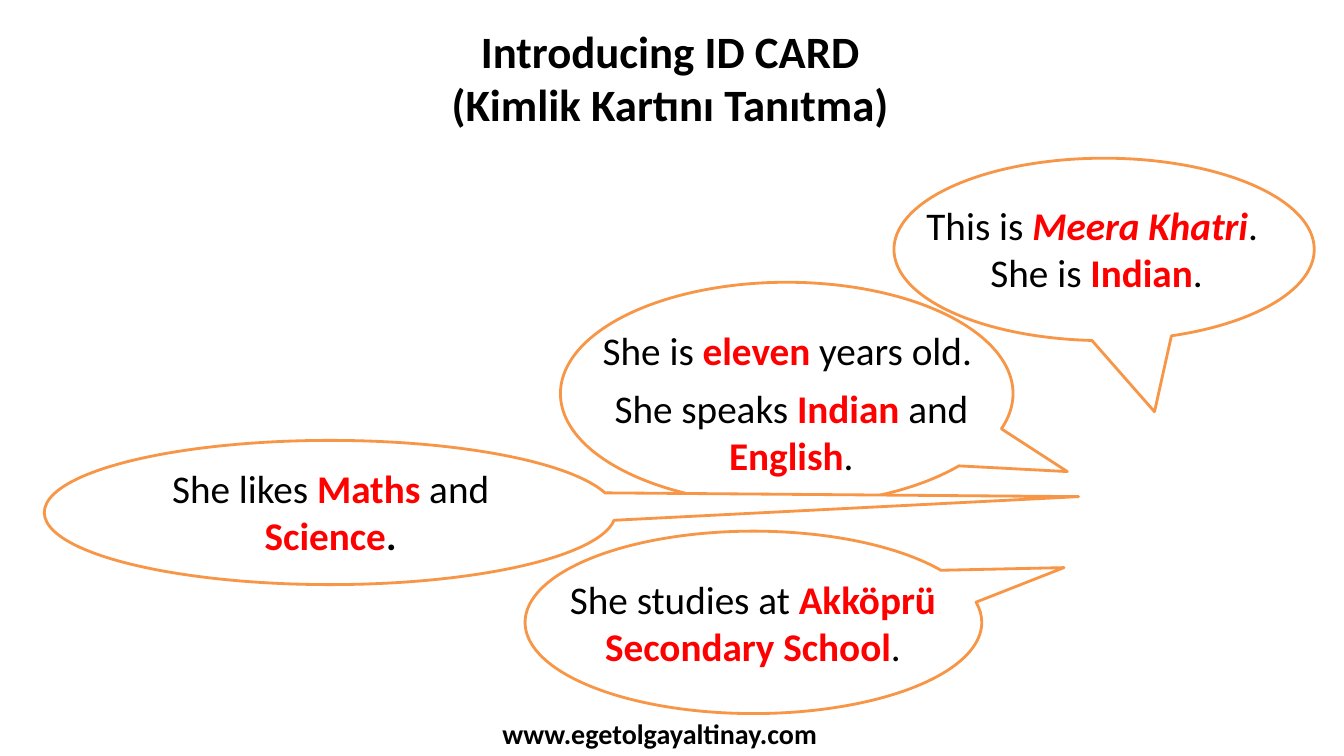
from pptx import Presentation
from pptx.dml.color import RGBColor
from pptx.enum.shapes import MSO_SHAPE as Shape
from pptx.enum.text import MSO_ANCHOR as Anchor, MSO_AUTO_SIZE as AutoSize, PP_ALIGN as Align
from pptx.util import Pt


def color(hex_text):
    return RGBColor.from_string(hex_text)


class SlideBuilder:
    """Holds the card style and the slide being filled."""

    font = "Calibri"
    ink, accent, outline, paper = "000000", "FF0000", "F79646", "FFFFFF"

    def __init__(self, slide):
        self.slide = slide

    def fill_text(self, frame, lines, size, bold=False, align=Align.CENTER):
        frame.word_wrap = True
        frame.auto_size = AutoSize.NONE
        frame.vertical_anchor = Anchor.TOP
        for index, line in enumerate(lines):
            paragraph = frame.add_paragraph() if index else frame.paragraphs[0]
            paragraph.alignment = align
            for text, style in line:
                run = paragraph.add_run()
                run.text = text
                run.font.name = self.font
                run.font.size = Pt(size)
                run.font.bold = bold or "b" in style
                run.font.italic = "i" in style
                run.font.color.rgb = color(self.accent if "r" in style else self.ink)

    def title(self, box, lines, size):
        shape = self.slide.shapes.title
        shape.left, shape.top, shape.width, shape.height = map(Pt, box)
        self.fill_text(shape.text_frame, lines, size, bold=True)

    def text(self, box, lines, size=28, **options):
        shape = self.slide.shapes.add_textbox(*map(Pt, box))
        self.fill_text(shape.text_frame, lines, size, **options)

    def bubble(self, box, tip):
        shape = self.slide.shapes.add_shape(Shape.OVAL_CALLOUT, *map(Pt, box))
        shape.shadow.inherit = False
        shape.adjustments[0], shape.adjustments[1] = tip
        shape.fill.solid()
        shape.fill.fore_color.rgb = color(self.paper)
        shape.line.color.rgb = color(self.outline)
        shape.line.width = Pt(2)


def main():
    presentation = Presentation()
    presentation.slide_width, presentation.slide_height = Pt(960), Pt(540)
    card = SlideBuilder(presentation.slides.add_slide(presentation.slide_layouts[5]))

    card.title((190.8, 13, 576, 85),
               [[("Introducing ID CARD", "")], [("(Kimlik Kartını Tanıtma)", "")]], 32)

    card.bubble((638.6, 113, 300.2, 130.3), (0.12, 0.89))
    card.text((638.6, 140.4, 289.4, 74.9), [
        [("This is ", ""), ("Meera Khatri", "rbi"), (". ", "")],
        [("She is ", ""), ("Indian", "rb"), (".", "")],
    ])

    card.bubble((400.3, 201.6, 323.3, 159.1), (0.62, 0.35))
    card.text((423.4, 229.7, 323.3, 41),
              [[("She is ", ""), ("eleven", "rb"), (" years old.", "")]], align=Align.LEFT)
    card.text((423.4, 270.7, 283.7, 108.7), [
        [("She speaks ", ""), ("Indian", "rb"), (" and ", ""), ("English", "rb"), (".", "")],
    ])

    card.bubble((31.7, 314.6, 408.2, 103), (1.31, -0.11))
    card.text((97.2, 328.3, 277.9, 74.9), [
        [("She likes ", ""), ("Maths", "rb"), (" and ", ""), ("Science", "rb"), (".", "b")],
    ])

    card.bubble((375.1, 379.4, 326.2, 130.3), (0.68, -0.3))
    card.text((375.1, 407.5, 325.4, 74.9), [
        [("She studies at ", ""), ("Akköprü Secondary School", "rb"), (".", "")],
    ])

    card.text((321.1, 508.3, 300.2, 31.7), [[("www.egetolgayaltinay.com", "")]], 20, bold=True)
    presentation.save("out.pptx")


if __name__ == "__main__":
    main()
